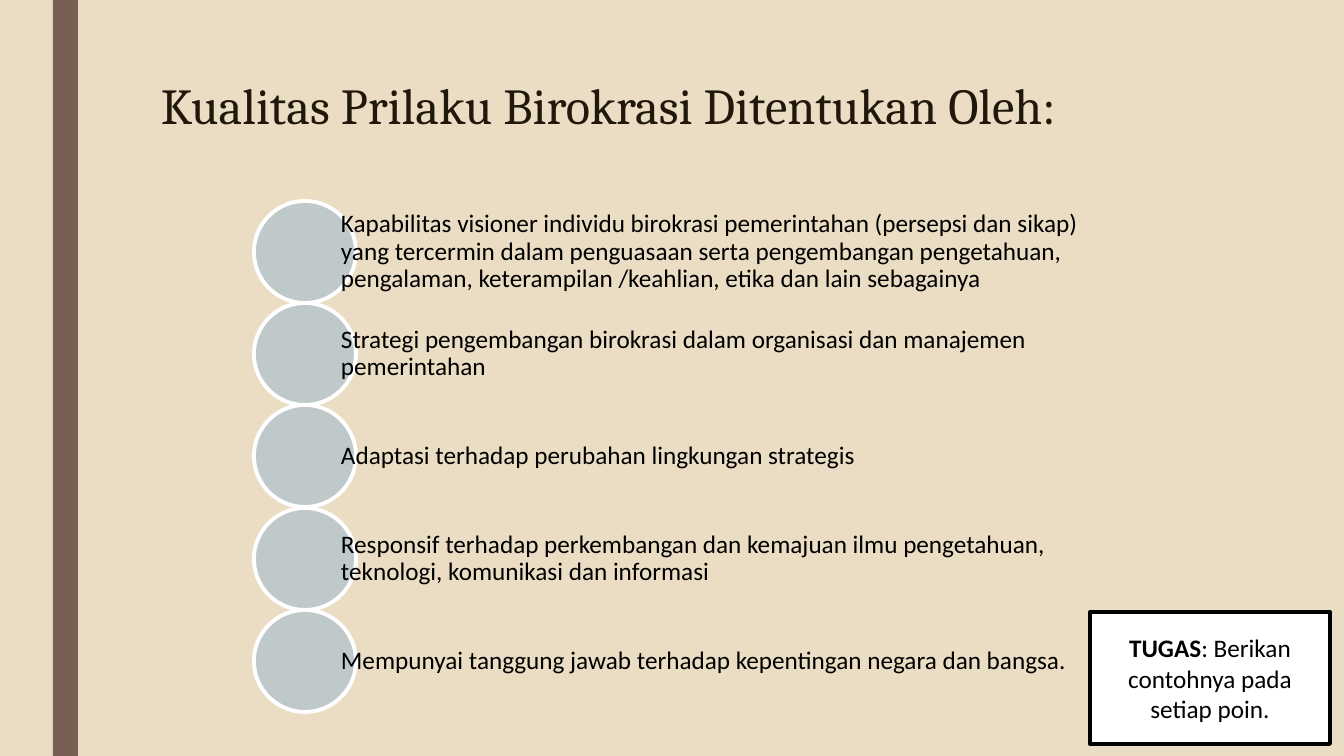
from lxml.etree import SubElement
from pptx import Presentation
from pptx.dml.color import RGBColor
from pptx.enum.shapes import MSO_SHAPE
from pptx.enum.text import MSO_ANCHOR, PP_ALIGN
from pptx.oxml.ns import qn
from pptx.util import Pt

EMU_PER_PX = 914400 / 100.8
COLORS = {
    "background": "EBDDC3",
    "stripe": "775F55",
    "title": "20190B",
    "circle": "94B6D2",
    "white": "FFFFFF",
    "black": "000000",
}
FACTORS = [
    "Kapabilitas visioner individu birokrasi pemerintahan (persepsi dan sikap) yang tercermin "
    "dalam penguasaan serta pengembangan pengetahuan, pengalaman, keterampilan /keahlian, "
    "etika dan lain sebagainya",
    "Strategi pengembangan birokrasi dalam organisasi dan manajemen pemerintahan",
    "Adaptasi terhadap perubahan lingkungan strategis",
    "Responsif terhadap perkembangan dan kemajuan ilmu pengetahuan, teknologi, komunikasi "
    "dan informasi",
    "Mempunyai tanggung jawab terhadap kepentingan negara dan bangsa.",
]
LIST_TOP = 201
LIST_SPAN = 512
CIRCLE_SIZE = 102


def px(value):
    """Turn pixels into EMU."""
    return round(value * EMU_PER_PX)


def color(name):
    """Return the named colour."""
    return RGBColor.from_string(COLORS[name])


def style_font(paragraph, name, size, color_name):
    """Set typeface, size and colour of a paragraph."""
    paragraph.font.name = name
    paragraph.font.size = Pt(size)
    paragraph.font.color.rgb = color(color_name)


def add_box(slide, kind, left, top, width, height, fill, line=None):
    """Add a flat filled shape with an optional outline."""
    shape = slide.shapes.add_shape(kind, px(left), px(top), px(width), px(height))
    shape.shadow.inherit = False
    shape.fill.solid()
    shape.fill.fore_color.rgb = color(fill)
    if line:
        shape.line.color.rgb = color(line)
        shape.line.width = Pt(2.75)
    else:
        shape.line.fill.background()
    return shape


def add_text(slide, left, top, width, height, text, font, spacing):
    """Add a wrapped text box and return its frame."""
    frame = slide.shapes.add_textbox(px(left), px(top), px(width), px(height)).text_frame
    frame.word_wrap = True
    paragraph = frame.paragraphs[0]
    paragraph.text = text
    paragraph.line_spacing = spacing
    style_font(paragraph, *font)
    return frame


def add_factor(slide, top, text):
    """Add a half-transparent circle with its statement."""
    circle = add_box(slide, MSO_SHAPE.OVAL, 254, top, CIRCLE_SIZE, CIRCLE_SIZE, "circle", "white")
    fill_color = circle.fill._xPr.find(qn("a:solidFill"))[0]
    SubElement(fill_color, qn("a:alpha"), val="50000")
    frame = add_text(slide, 341, top, 758, CIRCLE_SIZE, text, ("Calibri", 18, "black"), 0.9)
    frame.vertical_anchor = MSO_ANCHOR.MIDDLE
    frame.margin_left = frame.margin_right = 0
    frame.margin_top = frame.margin_bottom = px(3)


def add_task(slide):
    """Add the outlined assignment box."""
    box = add_box(slide, MSO_SHAPE.RECTANGLE, 1090, 612, 240, 132, "white", "black")
    frame = box.text_frame
    frame.word_wrap = True
    frame.vertical_anchor = MSO_ANCHOR.MIDDLE
    paragraph = frame.paragraphs[0]
    paragraph.alignment = PP_ALIGN.CENTER
    style_font(paragraph, "Calibri", 18, "black")
    label = paragraph.add_run()
    label.text = "TUGAS"
    label.font.bold = True
    paragraph.add_run().text = ": Berikan contohnya pada setiap poin."


def main():
    """Build and save the slide."""
    presentation = Presentation()
    presentation.slide_width = px(1344)
    presentation.slide_height = px(756)
    slide = presentation.slides.add_slide(presentation.slide_layouts[6])
    slide.background.fill.solid()
    slide.background.fill.fore_color.rgb = color("background")

    add_box(slide, MSO_SHAPE.RECTANGLE, 53, 0, 25, 756, "stripe")
    add_text(slide, 151, 76, 1058, 163, "Kualitas Prilaku Birokrasi Ditentukan Oleh:",
             ("Cambria", 36, "title"), 0.89)
    for index, text in enumerate(FACTORS):
        add_factor(slide, LIST_TOP + index * LIST_SPAN // len(FACTORS), text)
    add_task(slide)
    presentation.save("out.pptx")


if __name__ == "__main__":
    main()
